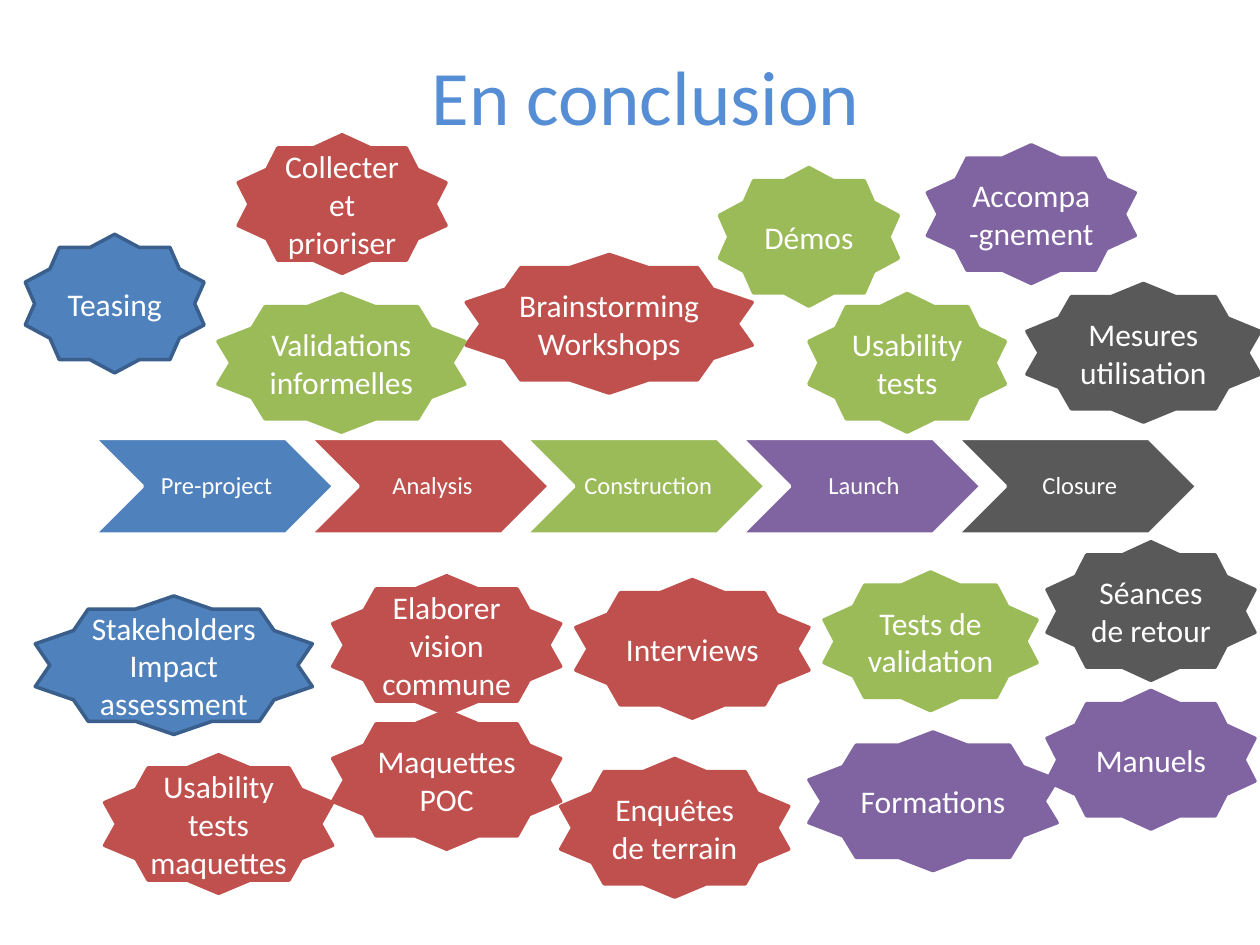
from typing import NamedTuple

from pptx import Presentation
from pptx.dml.color import RGBColor
from pptx.enum.shapes import MSO_SHAPE
from pptx.enum.text import MSO_ANCHOR, PP_ALIGN
from pptx.util import Inches, Pt

BLUE = RGBColor(0x4F, 0x81, 0xBD)
NAVY = RGBColor(0x3A, 0x5F, 0x8C)
SKY = RGBColor(0x55, 0x8E, 0xD5)
RED = RGBColor(0xC0, 0x50, 0x4D)
GREEN = RGBColor(0x9B, 0xBB, 0x59)
PURPLE = RGBColor(0x80, 0x64, 0xA2)
GRAY = RGBColor(0x59, 0x59, 0x59)
WHITE = RGBColor(0xFF, 0xFF, 0xFF)

STAR_HIGH = 1.1
STEP_LEFT, STEP_TOP, STEP_WIDE, STEP_HIGH = 0.75, 3.48, 1.9, 0.76
STEP_PITCH = 1.7125


class Step(NamedTuple):
    text: str
    fill: RGBColor


class Star(NamedTuple):
    text: str
    left: float
    top: float
    width: float
    fill: RGBColor


STEPS = [
    Step("Pre-project", BLUE),
    Step("Analysis", RED),
    Step("Construction", GREEN),
    Step("Launch", PURPLE),
    Step("Closure", GRAY),
]

STARS = [
    Star("Teasing", 0.2, 1.86, 1.42, BLUE),
    Star("Stakeholders Impact assessment", 0.28, 4.73, 2.2, BLUE),
    Star("Collecter et prioriser", 1.89, 1.07, 1.65, RED),
    Star("Elaborer vision commune", 2.64, 4.57, 1.81, RED),
    Star("Maquettes POC", 2.64, 5.64, 1.81, RED),
    Star("Usability tests maquettes", 0.83, 5.99, 1.81, RED),
    Star("Enquêtes de terrain", 4.45, 6.02, 1.81, RED),
    Star("Brainstorming Workshops", 3.7, 2.02, 2.27, RED),
    Star("Interviews", 4.57, 4.6, 1.85, RED),
    Star("Démos", 5.71, 1.33, 1.42, GREEN),
    Star("Usability tests", 6.42, 2.33, 1.56, GREEN),
    Star("Tests de validation", 6.54, 4.54, 1.69, GREEN),
    Star("Formations", 6.42, 5.81, 1.97, PURPLE),
    Star("Accompa-gnement", 7.36, 1.15, 1.65, PURPLE),
    Star("Séances de retour", 8.31, 4.3, 1.65, GRAY),
    Star("Manuels", 8.31, 5.48, 1.65, PURPLE),
    Star("Mesures utilisation", 8.15, 2.25, 1.85, GRAY),
    Star("Validations informelles", 1.73, 2.33, 1.96, GREEN),
]


def write(shape, text: str, size: int, color: RGBColor) -> None:
    """Put one centred paragraph in the middle of the shape."""
    frame = shape.text_frame
    frame.text = text
    frame.word_wrap = True
    frame.vertical_anchor = MSO_ANCHOR.MIDDLE
    para = frame.paragraphs[0]
    para.alignment = PP_ALIGN.CENTER
    font = para.runs[0].font
    font.name = "Calibri"
    font.size = Pt(size)
    font.color.rgb = color


def paint(shape, fill: RGBColor, line: RGBColor) -> None:
    shape.shadow.inherit = False
    shape.fill.solid()
    shape.fill.fore_color.rgb = fill
    shape.line.color.rgb = line
    shape.line.width = Pt(2)


def draw_title(slide) -> None:
    box = slide.shapes.add_textbox(
        Inches(0.75), Inches(0.13), Inches(8.75), Inches(1.25))
    write(box, "En conclusion", 44, SKY)


def draw_step(slide, step: Step, index: int) -> None:
    shape = slide.shapes.add_shape(
        MSO_SHAPE.CHEVRON,
        Inches(STEP_LEFT + index * STEP_PITCH), Inches(STEP_TOP),
        Inches(STEP_WIDE), Inches(STEP_HIGH))
    paint(shape, step.fill, WHITE)
    write(shape, step.text, 14, WHITE)
    frame = shape.text_frame
    frame.margin_left = Inches(0.06)
    frame.margin_right = frame.margin_top = frame.margin_bottom = Inches(0.02)
    frame.paragraphs[0].line_spacing = 0.9


def draw_star(slide, star: Star) -> None:
    shape = slide.shapes.add_shape(
        MSO_SHAPE.STAR_10_POINT,
        Inches(star.left), Inches(star.top),
        Inches(star.width), Inches(STAR_HIGH))
    paint(shape, star.fill, NAVY if star.fill == BLUE else star.fill)
    write(shape, star.text, 18, WHITE)


def main() -> None:
    deck = Presentation()
    deck.slide_width = Inches(10)
    deck.slide_height = Inches(7.5)
    slide = deck.slides.add_slide(deck.slide_layouts[6])
    draw_title(slide)
    for index, step in enumerate(STEPS):
        draw_step(slide, step, index)
    for star in STARS:
        draw_star(slide, star)
    deck.save("out.pptx")


if __name__ == "__main__":
    main()
